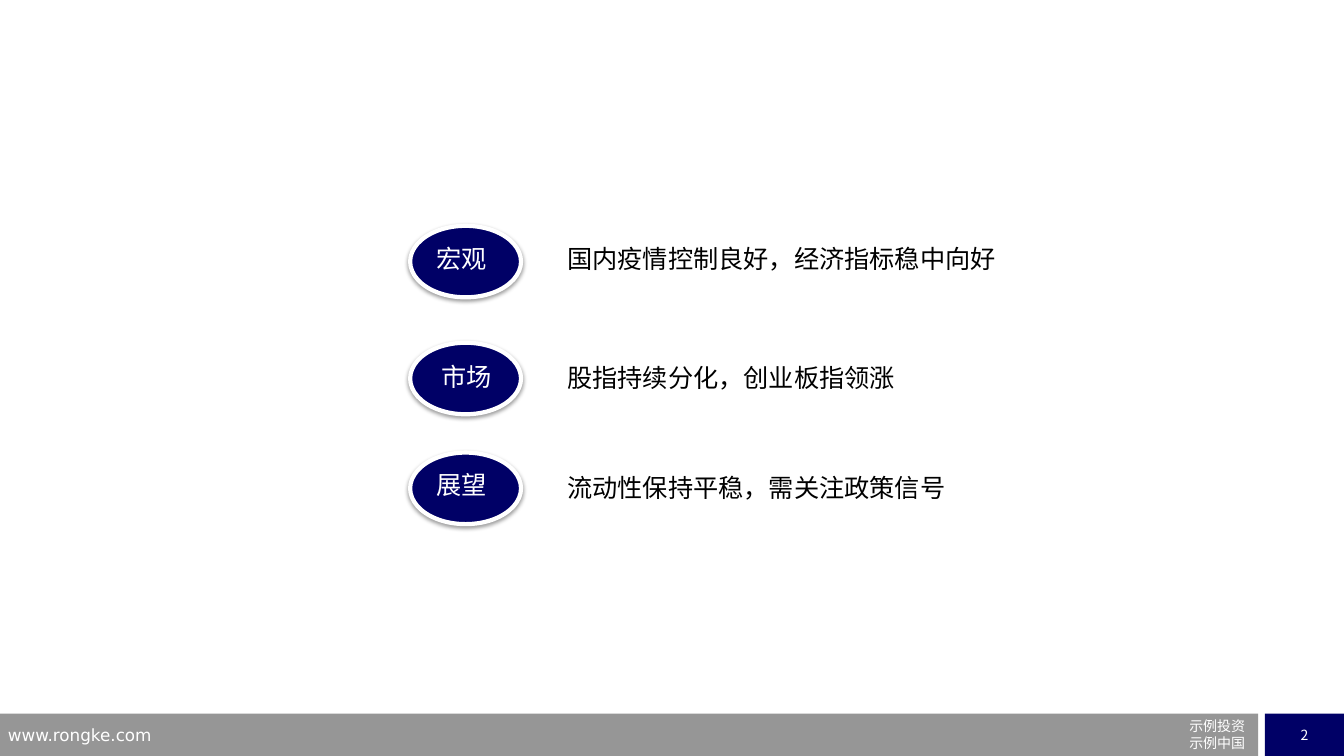
"""Build the summary slide with three labelled ovals and a footer."""
from lxml import etree
from pptx import Presentation
from pptx import util as u
from pptx.dml.color import RGBColor
from pptx.enum import shapes, text
from pptx.oxml.ns import qn

COLORS = {"navy": "000066", "gray": "969696", "white": "FFFFFF", "black": "000000"}
CJK_FONT = "Noto Sans CJK SC"
LATIN_FONT = "DejaVu Sans"
TOPICS = [
    ("宏观", "国内疫情控制良好，经济指标稳中向好", 161.3, 304.6, 170.6, 170.6),
    ("市场", "股指持续分化，创业板指领涨", 244.8, 308.2, 254.9, 255.6),
    ("展望", "流动性保持平稳，需关注政策信号", 323.3, 304.6, 331.9, 334.1),
]


def color(name):
    return RGBColor.from_string(COLORS[name])


def write(shape, lines, size, font, color_name, align=text.PP_ALIGN.LEFT):
    frame = shape.text_frame
    frame.text = "\n".join(lines)
    for paragraph in frame.paragraphs:
        paragraph.alignment = align
        for run in paragraph.runs:
            run.font.size = u.Pt(size)
            run.font.name = font
            run.font.color.rgb = color(color_name)
            east_asian = etree.SubElement(run.font._element, qn("a:ea"))
            east_asian.set("typeface", CJK_FONT)


def add_text(slide, box, lines, size, font, color_name, align=text.PP_ALIGN.LEFT):
    shape = slide.shapes.add_textbox(*map(u.Pt, box))
    shape.text_frame.word_wrap = True
    write(shape, lines, size, font, color_name, align)


def add_filled(slide, kind, box, fill):
    shape = slide.shapes.add_shape(kind, *map(u.Pt, box))
    shape.fill.solid()
    shape.fill.fore_color.rgb = color(fill)
    shape.line.fill.background()
    shape.shadow.inherit = False
    return shape


def add_oval(slide, top):
    oval = add_filled(slide, shapes.MSO_SHAPE.OVAL, (293, top, 79.2, 51.1), "navy")
    oval.line.color.rgb = color("white")
    oval.line.width = u.Pt(3)
    effects = oval._element.spPr.find(qn("a:effectLst"))
    shadow = etree.SubElement(
        effects, qn("a:outerShdw"), blurRad=str(u.Pt(3.1)), dist=str(u.Pt(1.6)),
        dir="5400000", rotWithShape="0")
    shade = etree.SubElement(shadow, qn("a:srgbClr"), val=COLORS["black"])
    etree.SubElement(shade, qn("a:alpha"), val="38000")


def add_footer(slide):
    rectangle = shapes.MSO_SHAPE.RECTANGLE
    add_filled(slide, rectangle, (0, 509.8, 898.6, 30.2), "gray")
    add_text(slide, (-1.4, 514.1, 231.8, 18.7), ["www.rongke.com"],
             12, LATIN_FONT, "white")
    add_text(slide, (788.4, 509, 108, 32.4), ["示例投资", "示例中国"],
             10, LATIN_FONT, "white", text.PP_ALIGN.RIGHT)
    number = add_filled(slide, rectangle, (903.6, 509.8, 56.4, 30.2), "navy")
    number.text_frame.vertical_anchor = text.MSO_ANCHOR.MIDDLE
    number.text_frame.word_wrap = False
    write(number, ["2"], 10, CJK_FONT, "white", text.PP_ALIGN.CENTER)


def main():
    presentation = Presentation()
    presentation.slide_width, presentation.slide_height = u.Pt(960), u.Pt(540)
    slide = presentation.slides.add_slide(presentation.slide_layouts[6])
    add_footer(slide)
    for label, statement, oval_top, label_left, label_top, statement_top in TOPICS:
        add_oval(slide, oval_top)
        add_text(slide, (label_left, label_top, 56.9, 28.8), [label],
                 18, CJK_FONT, "white")
        add_text(slide, (398.2, statement_top, 330, 28.8), [statement],
                 18, CJK_FONT, "black")
    presentation.save("out.pptx")


if __name__ == "__main__":
    main()
